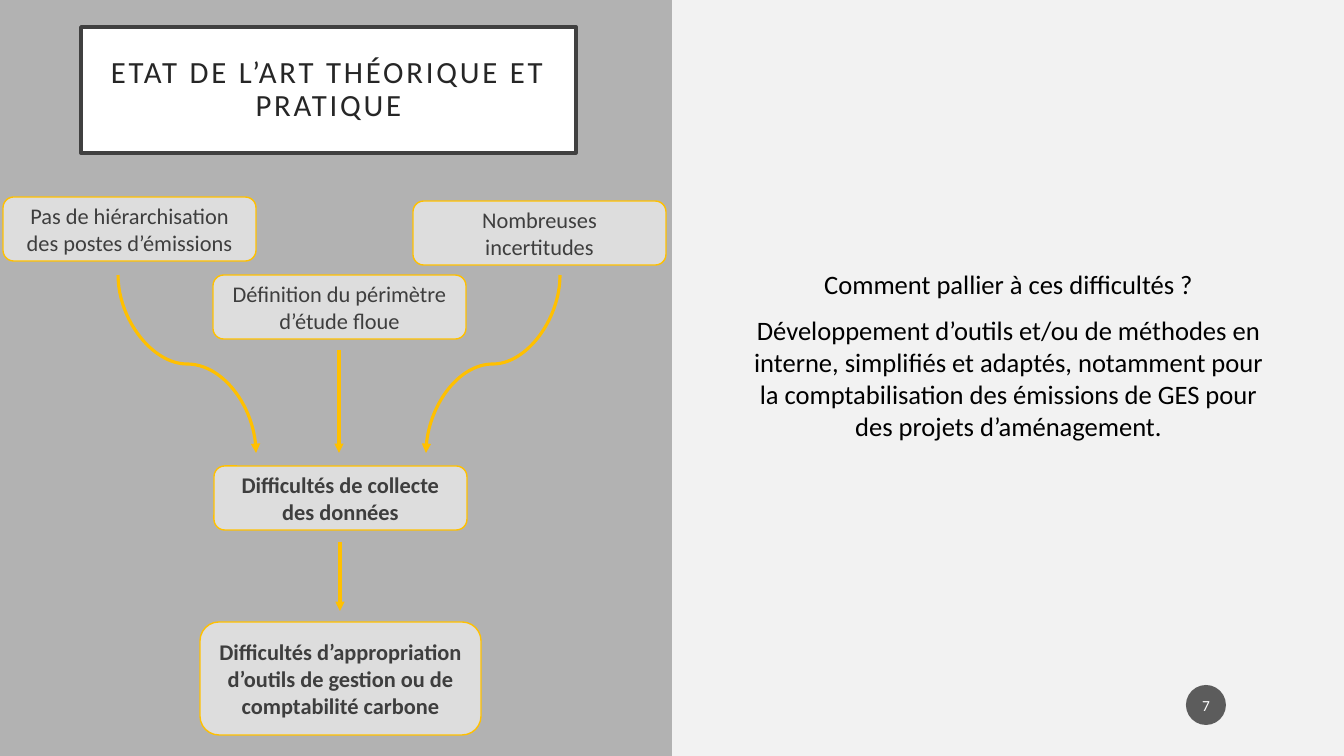
from pptx import Presentation
from pptx.dml.color import RGBColor
from pptx.enum.shapes import MSO_CONNECTOR, MSO_SHAPE
from pptx.enum.text import MSO_ANCHOR, PP_ALIGN
from pptx.oxml.ns import qn
from pptx.util import Emu, Pt
from lxml.etree import SubElement

SLIDE = (1344, 756)
EMU_PER_PX = 12192000 / 1344
FONT = "Calibri"
GREY, PALE, GOLD, INK = "B2B2B2", "DDDDDD", "FFC000", "3E3E3E"

TITLE = "ETAT DE L’ART THÉORIQUE ET PRATIQUE"
TITLE_BOX = (81, 27, 495, 126)
ANSWER = [
    "Comment pallier à ces difficultés ?",
    "Développement d’outils et/ou de méthodes en interne, simplifiés et adaptés, "
    "notamment pour la comptabilisation des émissions de GES pour des projets d’aménagement.",
]
ANSWER_BOX = (743, 89, 531, 532)
PAGE = "7"
PAGE_BOX = (1186, 685, 40, 40)

# text, (left, top, width, height), bold
CAUSE_SIZE = (253, 64)
DIFFICULTIES = [
    ("Pas de hiérarchisation des postes d’émissions", (3, 197, *CAUSE_SIZE), False),
    ("Définition du périmètre d’étude floue", (213, 275, *CAUSE_SIZE), False),
    ("Nombreuses incertitudes", (413, 201, *CAUSE_SIZE), False),
    ("Difficultés de collecte des données", (214, 466, *CAUSE_SIZE), True),
    ("Difficultés d’appropriation d’outils de gestion ou de comptabilité carbone",
     (200, 622, 281, 113), True),
]
# start, end
ARROWS = [
    ((118, 275), (256, 453)),
    ((560, 275), (426, 453)),
    ((339, 350), (339, 453)),
    ((340, 542), (340, 611)),
]


def px(*lengths):
    return [Emu(round(length * EMU_PER_PX)) for length in lengths]


def color(hex_code):
    return RGBColor.from_string(hex_code)


def place(shape, box):
    shape.left, shape.top, shape.width, shape.height = px(*box)


def write(shape, *paragraphs, size, ink, bold=False, before=0, line=None,
          spacing=None, insets=None):
    """Fill a shape with centred paragraphs; insets are (horizontal, vertical) px."""
    frame = shape.text_frame
    frame.word_wrap = True
    frame.vertical_anchor = MSO_ANCHOR.MIDDLE
    if insets:
        frame.margin_left = frame.margin_right = px(insets[0])[0]
        frame.margin_top = frame.margin_bottom = px(insets[1])[0]
    for index, text in enumerate(paragraphs):
        paragraph = frame.add_paragraph() if index else frame.paragraphs[0]
        paragraph.alignment = PP_ALIGN.CENTER
        paragraph.space_before = Pt(before)
        if line:
            paragraph.line_spacing = line
        run = paragraph.add_run()
        run.text = text
        run.font.name, run.font.size, run.font.bold = FONT, Pt(size), bold
        run.font.color.rgb = color(ink)
        if spacing:
            run.font._element.set("spc", str(spacing * 100))


def paint(shape, fill, outline=None, width=1):
    shape.fill.solid()
    shape.fill.fore_color.rgb = color(fill)
    if outline:
        shape.line.color.rgb = color(outline)
        shape.line.width = Pt(width)
    else:
        shape.line.fill.background()


def add_block(slide, kind, box, fill, outline=None):
    block = slide.shapes.add_shape(kind, *px(*box))
    block.shadow.inherit = False
    paint(block, fill, outline)
    return block


def add_arrow(slide, start, end):
    """Straight when vertical, otherwise an S-curve that leaves and arrives vertically."""
    (x1, y1), (x2, y2) = start, end
    if x1 == x2:
        arrow = slide.shapes.add_connector(MSO_CONNECTOR.STRAIGHT, *px(x1, y1, x2, y2))
    else:
        # The preset runs sideways, so it is laid flat and turned a quarter.
        turn = 1 if x2 < x1 else -1
        middle_x, middle_y = (x1 + x2) / 2, (y1 + y2) / 2
        run, rise = turn * (y2 - y1) / 2, abs(x2 - x1) / 2
        arrow = slide.shapes.add_connector(
            MSO_CONNECTOR.CURVE,
            *px(middle_x - run, middle_y - rise, middle_x + run, middle_y + rise))
        arrow._element.spPr.find(qn("a:xfrm")).set("rot", str(turn * 90 % 360 * 60000))
    arrow.line.color.rgb = color(GOLD)
    arrow.line.width = Pt(2.25)
    SubElement(arrow.line._get_or_add_ln(), qn("a:tailEnd"), type="triangle")
    SubElement(arrow._element.spPr, qn("a:effectLst"))


def main():
    deck = Presentation()
    deck.slide_width, deck.slide_height = px(*SLIDE)
    slide = deck.slides.add_slide(deck.slide_layouts[1])
    slide.background.fill.solid()
    slide.background.fill.fore_color.rgb = color("F2F2F2")

    panel = add_block(slide, MSO_SHAPE.RECTANGLE, (0, 0, SLIDE[0] / 2, SLIDE[1]), GREY)
    slide.shapes._spTree.insert(2, panel._element)  # behind the placeholders

    title, answer = slide.placeholders
    place(title, TITLE_BOX)
    paint(title, "FFFFFF", "404040", 2.5)
    write(title, TITLE, size=22, ink="262626", line=0.9, spacing=2, insets=(20, 20))

    place(answer, ANSWER_BOX)
    write(answer, *ANSWER, size=19, ink="000000", before=10)
    for paragraph in answer.text_frame.paragraphs:
        properties = paragraph._p.get_or_add_pPr()
        properties.set("marL", "0")
        properties.set("indent", "0")
        SubElement(properties, qn("a:buNone"))

    page = add_block(slide, MSO_SHAPE.OVAL, PAGE_BOX, "1D1D1D")
    page_color = page.fill._xPr.find(qn("a:solidFill"))[0]
    SubElement(page_color, qn("a:alpha"), val="70000")
    write(page, PAGE, size=11, ink="FFFFFF", insets=(2, 5))

    for text, box, bold in DIFFICULTIES:
        difficulty = add_block(slide, MSO_SHAPE.ROUNDED_RECTANGLE, box, PALE, GOLD)
        write(difficulty, text, size=16, ink=INK, bold=bold)
    for start, end in ARROWS:
        add_arrow(slide, start, end)

    deck.save("out.pptx")


if __name__ == "__main__":
    main()
